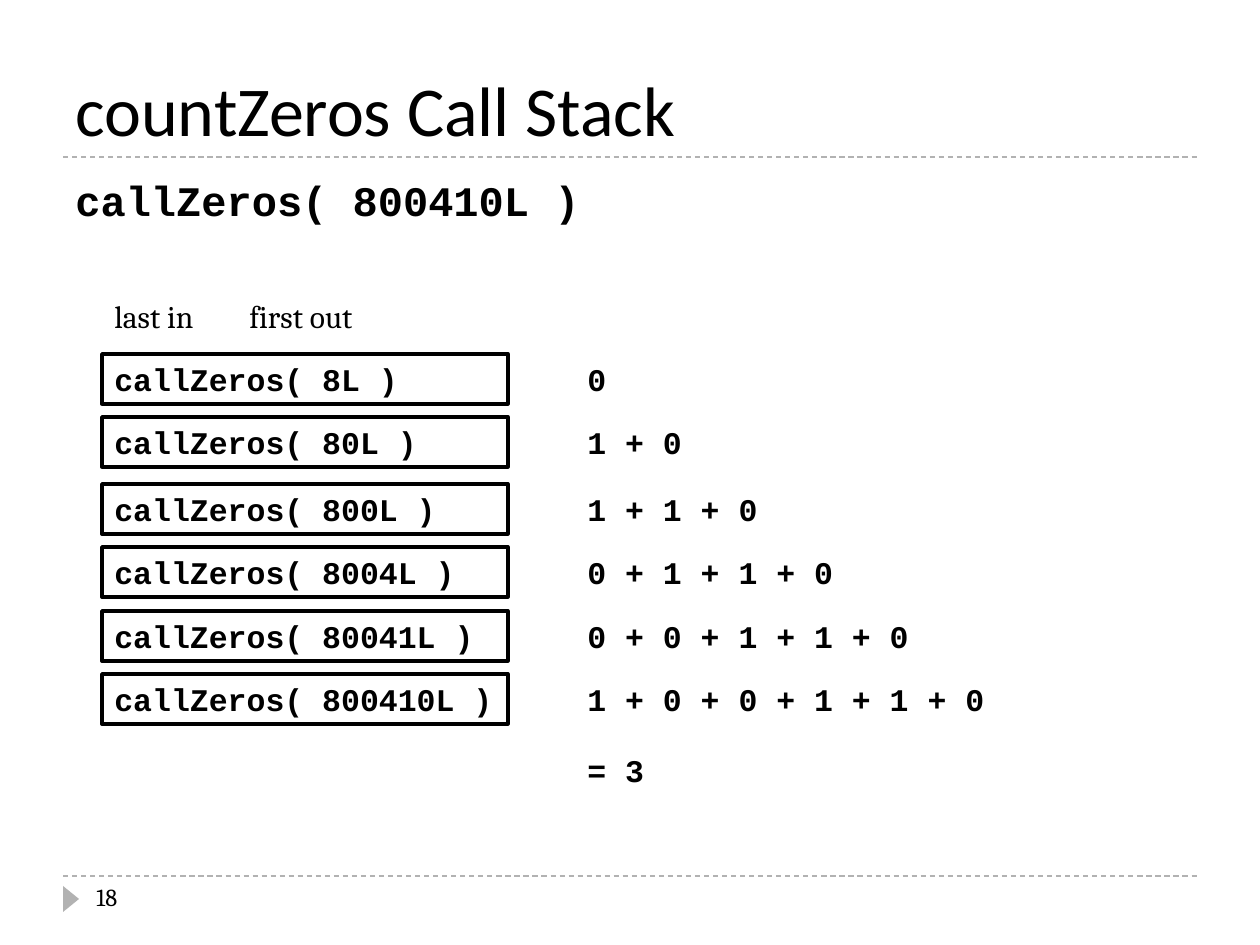
from lxml import etree
from pptx import Presentation
from pptx.dml.color import RGBColor
from pptx.enum.dml import MSO_LINE
from pptx.enum.shapes import MSO_CONNECTOR, MSO_SHAPE
from pptx.enum.text import MSO_ANCHOR, PP_ALIGN
from pptx.oxml.ns import qn
from pptx.util import Pt

SCALE = 914400 / 126  # EMU per px
STRAIGHT = MSO_CONNECTOR.STRAIGHT
RECTANGLE, TRIANGLE = MSO_SHAPE.RECTANGLE, MSO_SHAPE.ISOSCELES_TRIANGLE
DASH = MSO_LINE.DASH
TOP, BOTTOM = MSO_ANCHOR.TOP, MSO_ANCHOR.BOTTOM
LEFT = PP_ALIGN.LEFT
BLACK, GREY = "000000", "B2B2B2"
CODE, SERIF, SANS = "Courier New", "Cambria", "Calibri"


def emu(*lengths):
    return [round(length * SCALE) for length in lengths]


def write(shape, text, font=CODE, size=18, bold=False, anchor=TOP, before=0):
    frame = shape.text_frame
    frame.word_wrap = True
    frame.vertical_anchor = anchor
    para = frame.paragraphs[0]
    para.alignment = LEFT
    para.space_before = Pt(before)
    span = para.add_run()
    span.text = text
    span.font.name = font
    span.font.size = Pt(size)
    span.font.bold = bold
    span.font.color.rgb = RGBColor.from_string(BLACK)


deck = Presentation()
deck.slide_width, deck.slide_height = emu(1260, 945)
page = deck.slides.add_slide(deck.slide_layouts[6])

# Dashed rules above and below the content
for y in (876, 157):
    rule = page.shapes.add_connector(STRAIGHT, *emu(63, y, 1197, y))
    rule.line.color.rgb = RGBColor.from_string(GREY)
    rule.line.width = Pt(0.75)
    rule.line.dash_style = DASH
    etree.SubElement(rule._element.spPr, qn("a:effectLst"))

# Page marker
marker = page.shapes.add_shape(TRIANGLE, *emu(58, 891, 26, 16))
marker.rotation = 90
marker.shadow.inherit = False
marker.fill.solid()
marker.fill.fore_color.rgb = RGBColor.from_string(GREY)
marker.line.fill.background()

# Title, call, page number and captions of the stack
title = page.shapes.add_textbox(*emu(63, 21, 1134, 136))
write(title, "countZeros Call Stack", font=SANS, size=40, anchor=BOTTOM)
call = page.shapes.add_textbox(*emu(63, 168, 1134, 680))
write(call, "callZeros( 800410L )", size=24, bold=True, before=6)
number = page.shapes.add_textbox(*emu(84, 876, 273, 50))
write(number, "18", font=SERIF, size=14)
for x, caption in ((102, "last in"), (237, "first out")):
    box = page.shapes.add_textbox(*emu(x, 291, 132, 50))
    write(box, caption, font=SERIF)

# Stack frames with the sum each one returns
frames = [
    (354, "8L", "0"),
    (417, "80L", "1 + 0"),
    (484, "800L", "1 + 1 + 0"),
    (547, "8004L", "0 + 1 + 1 + 0"),
    (611, "80041L", "0 + 0 + 1 + 1 + 0"),
    (674, "800410L", "1 + 0 + 0 + 1 + 1 + 0"),
]
for y, argument, total in frames:
    frame_box = page.shapes.add_shape(RECTANGLE, *emu(102, y, 406, 50))
    frame_box.shadow.inherit = False
    frame_box.fill.background()
    frame_box.line.color.rgb = RGBColor.from_string(BLACK)
    frame_box.line.width = Pt(2)
    write(frame_box, f"callZeros( {argument} )", bold=True)
    sum_box = page.shapes.add_textbox(*emu(575, y, 430, 50))
    write(sum_box, total, bold=True)

result = page.shapes.add_textbox(*emu(575, 745, 406, 50))
write(result, "= 3", bold=True)

deck.save("out.pptx")
